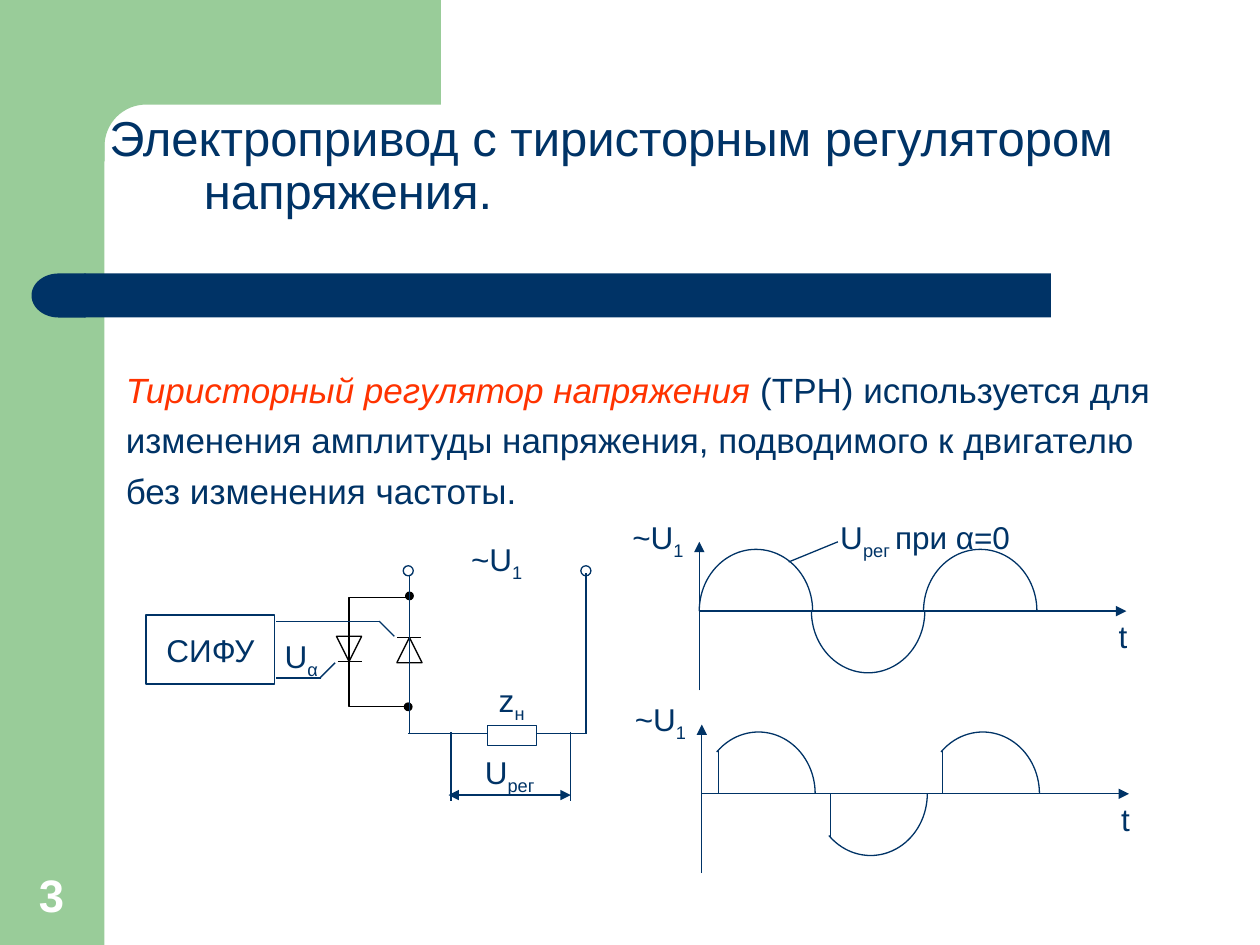
import math

from lxml import etree
from pptx import Presentation
from pptx.dml.color import RGBColor
from pptx.enum.shapes import MSO_CONNECTOR, MSO_SHAPE
from pptx.enum.text import MSO_ANCHOR, PP_ALIGN
from pptx.oxml.ns import qn
from pptx.util import Inches, Pt

NAVY = RGBColor(0x00, 0x33, 0x66)
GREEN = RGBColor(0x99, 0xCC, 0x99)
RED = RGBColor(0xFF, 0x33, 0x00)
BLACK = RGBColor(0, 0, 0)
WHITE = RGBColor(0xFF, 0xFF, 0xFF)

RECT, OVAL = MSO_SHAPE.RECTANGLE, MSO_SHAPE.OVAL
TRIANGLE, DELAY, ARC = MSO_SHAPE.ISOSCELES_TRIANGLE, MSO_SHAPE.FLOWCHART_DELAY, MSO_SHAPE.ARC
STRAIGHT = MSO_CONNECTOR.STRAIGHT
TOP, MIDDLE, BOTTOM = MSO_ANCHOR.TOP, MSO_ANCHOR.MIDDLE, MSO_ANCHOR.BOTTOM
CENTER = PP_ALIGN.CENTER


class Board:
    """Holds the drawing style and the current slide."""

    font = "Arial"
    line_width = Pt(0.75)

    def __init__(self, slide):
        self.shapes = slide.shapes

    def _paint(self, shape, fill, line):
        shape.shadow.inherit = False
        if fill is None:
            shape.fill.background()
        else:
            shape.fill.solid()
            shape.fill.fore_color.rgb = fill
        if line is None:
            shape.line.fill.background()
        else:
            shape.line.color.rgb = line
            shape.line.width = self.line_width
        return shape

    def shape(self, kind, x, y, w, h, fill=None, line=None, rotation=0):
        shape = self.shapes.add_shape(kind, Inches(x), Inches(y), Inches(w), Inches(h))
        shape.rotation = rotation
        return self._paint(shape, fill, line)

    def outline(self, points, fill=None, line=None, close=True):
        start, *rest = [(Inches(x), Inches(y)) for x, y in points]
        builder = self.shapes.build_freeform(*start)
        builder.add_line_segments(rest, close=close)
        return self._paint(builder.convert_to_shape(), fill, line)

    def line(self, x1, y1, x2, y2, color=NAVY, arrow=False):
        line = self.shapes.add_connector(STRAIGHT, Inches(x1), Inches(y1), Inches(x2), Inches(y2))
        line.line.color.rgb = color
        line.line.width = self.line_width
        if arrow:
            etree.SubElement(line.line._get_or_add_ln(), qn("a:tailEnd"), type="triangle")
        etree.SubElement(line._element.spPr, qn("a:effectLst"))

    def arc(self, cx, cy, rx, ry, start, end):
        """Draw an elliptical arc clockwise between two angles in degrees."""
        arc = self.shape(ARC, cx - rx, cy - ry, 2 * rx, 2 * ry, line=NAVY)
        for index, angle in enumerate((start, end)):
            arc.adjustments[index] = angle * 0.6

    def style(self, paragraph, size, color=NAVY, align=None, spacing=None):
        paragraph.font.name = self.font
        paragraph.font.size = Pt(size)
        paragraph.font.color.rgb = color
        paragraph.alignment = align
        paragraph.line_spacing = spacing
        return paragraph

    def text(self, x, y, w, h, *texts, size, wrap=True, anchor=TOP, **look):
        """Add a text box with one paragraph per text and return the paragraphs."""
        frame = self.shapes.add_textbox(Inches(x), Inches(y), Inches(w), Inches(h)).text_frame
        frame.word_wrap = wrap
        frame.vertical_anchor = anchor
        for _ in texts[1:]:
            frame.add_paragraph()
        for paragraph, words in zip(frame.paragraphs, texts):
            self.style(paragraph, size, **look).add_run().text = words
        return frame.paragraphs

    def label(self, x, y, w, symbol, index="", rest=""):
        """Write a symbol with a subscript index."""
        paragraph, = self.text(x, y, w, 0.4, symbol, size=18, wrap=False)
        if index:
            subscript = paragraph.add_run()
            subscript.text = index
            subscript.font._element.set("baseline", "-25000")
        if rest:
            paragraph.add_run().text = rest


def draw_frame(board):
    board.shape(RECT, 0, 0, 0.83, 7.5, GREEN)
    radius, center = 0.33, 1.16
    angles = [math.radians(90 * step / 16) for step in range(17)]
    corner = [(center - radius * math.sin(a), center - radius * math.cos(a)) for a in angles]
    board.outline([(3.5, 0), (3.5, 0.83), *corner, (0.83, 1.28), (0.5, 1.28), (0.5, 0)], GREEN)
    board.shape(RECT, 0.67, 2.17, 7.67, 0.35, NAVY)
    board.shape(DELAY, 0.25, 2.17, 0.43, 0.35, NAVY, rotation=180)
    number, = board.text(0.09, 6.83, 0.64, 0.53, "3", size=26, anchor=BOTTOM,
                         color=WHITE, align=CENTER)
    number.font.bold = True


def draw_texts(board):
    title, = board.text(0.77, 0.84, 8.81, 1.42,
                        "Электропривод с тиристорным регулятором напряжения.",
                        size=28, anchor=BOTTOM, spacing=0.9)
    title.add_line_break()
    properties = title._p.get_or_add_pPr()
    properties.set("marL", str(Inches(0.75)))
    properties.set("indent", str(Inches(-0.75)))

    definition, _ = board.text(
        0.9, 2.81, 8.66, 1.3, "Тиристорный регулятор напряжения",
        "изменения амплитуды напряжения, подводимого к двигателю без изменения частоты.",
        size=20, spacing=1.2)
    term = definition.runs[0].font
    term.italic = True
    term.color.rgb = RED
    definition.add_run().text = " (ТРН) используется для"


def draw_circuit(board):
    board.shape(TRIANGLE, 2.67, 5.05, 0.2, 0.2, WHITE, BLACK, rotation=180)
    board.line(2.68, 5.25, 2.87, 5.25, BLACK)
    board.outline([(3.24, 4.74), (2.77, 4.74), (2.77, 5.61), (3.26, 5.61)],
                  line=BLACK, close=False)
    board.shape(TRIANGLE, 3.15, 5.06, 0.2, 0.2, WHITE, BLACK)
    board.line(3.34, 5.06, 3.15, 5.06, BLACK)
    for x, y in ((3.21, 5.58), (3.22, 4.7)):
        board.shape(OVAL, x, y, 0.06, 0.06, BLACK, BLACK)

    control = board.shape(RECT, 1.16, 4.88, 1.02, 0.55, line=NAVY).text_frame
    control.word_wrap = False
    control.vertical_anchor = MIDDLE
    board.style(control.paragraphs[0], 18, align=CENTER).add_run().text = "СИФУ"

    wires = [
        (2.66, 5.26, 2.54, 5.38), (2.55, 5.38, 2.19, 5.38),
        (3.01, 4.93, 3.13, 5.05), (3.01, 4.93, 2.19, 4.93),
        (3.25, 4.56, 3.25, 5.82), (3.24, 5.82, 3.87, 5.82),
        (4.65, 4.55, 4.65, 5.82), (4.26, 5.82, 4.66, 5.82),
        (3.58, 5.81, 3.58, 6.36), (4.53, 5.81, 4.53, 6.36),
    ]
    for wire in wires:
        board.line(*wire)
    for terminal_x in (3.2, 4.61):
        board.shape(OVAL, terminal_x, 4.49, 0.08, 0.08, line=NAVY)
    board.shape(RECT, 3.87, 5.76, 0.39, 0.16, line=NAVY)
    board.line(3.58, 6.31, 4.53, 6.31, arrow=True)
    board.line(3.95, 6.31, 3.56, 6.31, arrow=True)

    board.label(3.64, 4.24, 0.62, "~U", "1")
    board.label(3.86, 5.36, 0.42, "z", "н")
    board.label(3.75, 5.93, 0.63, "U", "рег")
    board.label(2.16, 5.01, 0.48, "U", "α")


def draw_wave(board, x, y, delay=0):
    """Draw axes from (x, y) and three half-waves, each cut off before the delay angle."""
    half, rx, ry = 0.89, 0.45, 0.49
    board.line(x, y, x + 3.39, y, arrow=True)
    board.line(x, y + 0.63, x, y - 0.55, arrow=True)
    for number in range(3):
        center = x + rx + number * half
        below = number % 2 == 1
        board.arc(center, y, rx, ry, *((0, 180 - delay) if below else (180 + delay, 0)))
        if delay:
            edge = center - rx * math.cos(math.radians(delay))
            rise = ry * math.sin(math.radians(delay))
            board.line(edge, y + rise if below else y - rise, edge, y)
    board.label(x - 0.63, y - 0.79, 0.62, "~U", "1")
    board.label(x + 3.23, y, 0.27, "t")


def main():
    deck = Presentation()
    deck.slide_width, deck.slide_height = Inches(10), Inches(7.5)
    board = Board(deck.slides.add_slide(deck.slide_layouts[6]))
    draw_frame(board)
    draw_texts(board)
    draw_wave(board, 5.57, 6.3, delay=45)
    draw_circuit(board)
    draw_wave(board, 5.55, 4.85)
    board.label(6.57, 4.06, 1.59, "U", "рег ", "при α=0")
    board.line(6.26, 4.46, 6.65, 4.3)
    deck.save("out.pptx")


if __name__ == "__main__":
    main()
